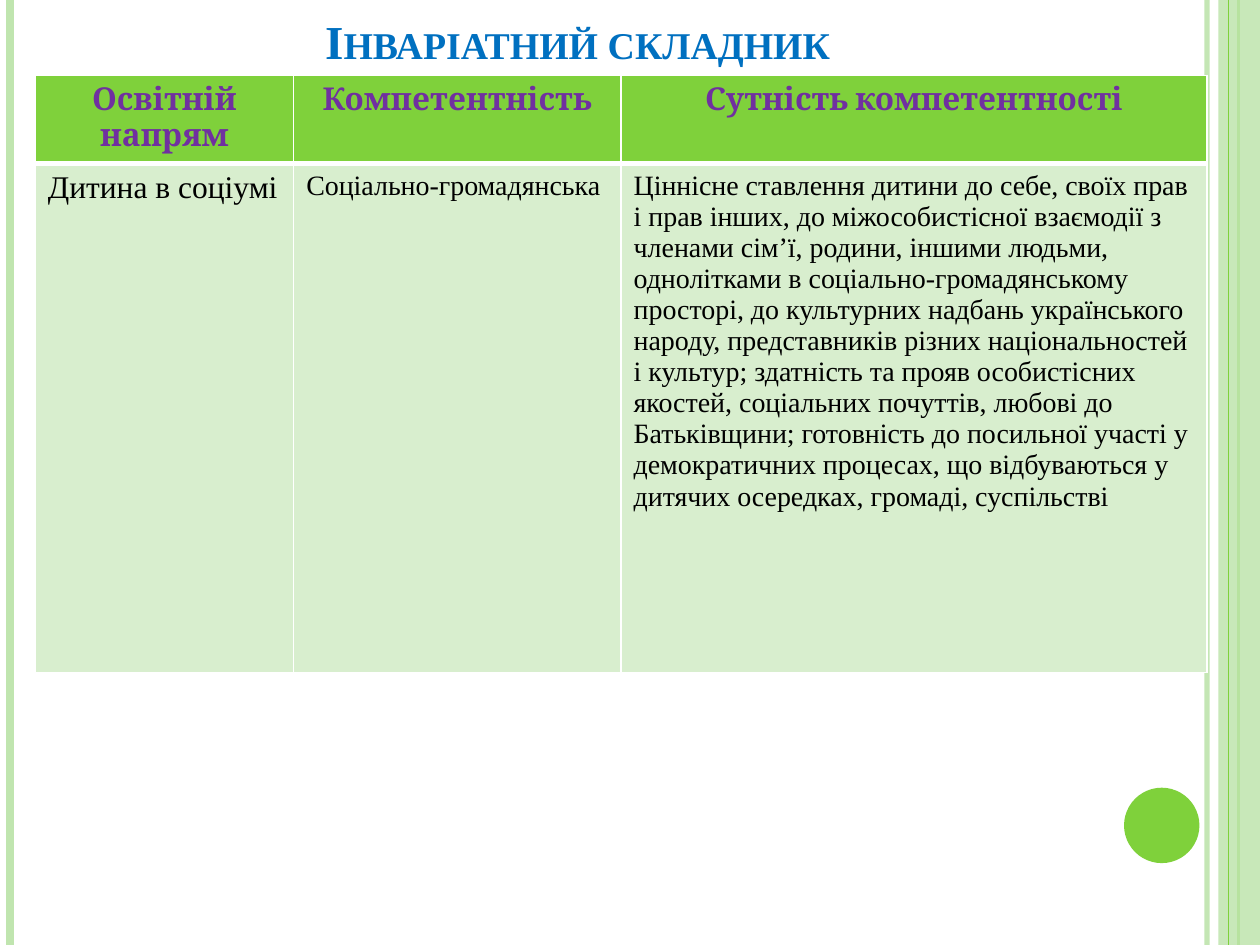
from dataclasses import dataclass
from typing import NamedTuple

from lxml import etree
from pptx import Presentation
from pptx.dml.color import RGBColor
from pptx.enum import shapes, text
from pptx.oxml.ns import qn
from pptx.util import Cm, Pt


@dataclass(frozen=True)
class Theme:
    white: str = "FFFFFF"
    black: str = "000000"
    green: str = "7FD13B"
    pale: str = "C0E5AF"
    mint: str = "D8EECE"
    blue: str = "0070C0"
    plum: str = "7030A0"
    serif: str = "Times New Roman"
    head: str = "Cambria"
    big: float = 27
    mid: float = 18
    small: float = 16


class Rule(NamedTuple):
    x: float
    width: float
    color: str
    alpha: int = 100


class Style(NamedTuple):
    font: str
    size: float
    color: str
    bold: bool = False
    align: text.PP_ALIGN = text.PP_ALIGN.LEFT


class Edges(NamedTuple):
    """Border widths in points, in the order the cell XML needs."""
    L: float
    R: float
    T: float
    B: float


T = Theme()
WIDTH, HEIGHT = 25.4, 19.05
MID = text.PP_ALIGN.CENTER
TITLE = Style(T.serif, T.big, T.blue, True, MID)
HEAD = Style(T.head, T.mid, T.plum, True, MID)
LEAD = Style(T.serif, T.mid, T.black)
BODY = Style(T.serif, T.small, T.black)

BACK = [Rule(24.33, 3, T.pale, 93), Rule(0.2, 4.5, T.pale), Rule(24.97, 1.5, T.green)]
FRONT = Rule(24.77, 0.75, T.green)

COLS = [5.21, 6.6, 11.81]
ROWS = [1.78, 10.26]
CELLS = [
    ["Освітній напрям", "Компетентність", "Сутність компетентності"],
    [
        "Дитина в соціумі",
        "Соціально-громадянська",
        "Ціннісне ставлення дитини до себе, своїх прав і прав інших, "
        "до міжособистісної взаємодії з членами сім’ї, родини, іншими людьми, "
        "однолітками в соціально-громадянському просторі, до культурних надбань "
        "українського народу, представників різних національностей і культур; "
        "здатність та прояв особистісних якостей, соціальних почуттів, любові до "
        "Батьківщини; готовність до посильної участі у демократичних процесах, "
        "що відбуваються у дитячих осередках, громаді, суспільстві",
    ],
]
STYLES = [[HEAD] * 3, [LEAD, BODY, BODY]]
FILLS = [T.green, T.mint]
EDGES = [Edges(1, 1, 1, 3), Edges(1, 1, 3, 1)]


def paint(fill, color: str, alpha: int = 100) -> None:
    fill.solid()
    fill.fore_color.rgb = RGBColor.from_string(color)
    if alpha < 100:
        tint = fill._xPr.find(qn("a:solidFill"))[0]
        etree.SubElement(tint, qn("a:alpha"), val=str(alpha * 1000))


def write(frame, words: str, style: Style) -> None:
    frame.text = words
    para = frame.paragraphs[0]
    para.alignment = style.align
    font = para.runs[0].font
    font.name, font.size, font.bold = style.font, Pt(style.size), style.bold
    font.color.rgb = RGBColor.from_string(style.color)


def draw_rule(slide, rule: Rule) -> None:
    x = Cm(rule.x)
    line = slide.shapes.add_connector(shapes.MSO_CONNECTOR.STRAIGHT, x, 0, x, Cm(HEIGHT))
    line.line.width = Pt(rule.width)
    paint(line.line.fill, rule.color, rule.alpha)
    etree.SubElement(line._element.spPr, qn("a:effectLst"))


def draw_shape(slide, kind, box: tuple, color: str, alpha: int = 100) -> None:
    shape = slide.shapes.add_shape(kind, *map(Cm, box))
    shape.shadow.inherit = False
    shape.line.fill.background()
    paint(shape.fill, color, alpha)


def draw_title(slide, words: str) -> None:
    title = slide.shapes.title
    title.left, title.top, title.width, title.height = map(Cm, (1.27, 0.33, 20.75, 1.19))
    frame = title.text_frame
    write(frame, words, TITLE)
    frame.auto_size = text.MSO_AUTO_SIZE.NONE
    frame.vertical_anchor = text.MSO_ANCHOR.BOTTOM
    frame.paragraphs[0].runs[0].font._element.set("cap", "small")


def edge_cell(cell, edges: Edges) -> None:
    props = cell._tc.get_or_add_tcPr()
    for side, width in edges._asdict().items():
        line = etree.SubElement(props, qn(f"a:ln{side}"), w=str(Pt(width)))
        fill = etree.SubElement(line, qn("a:solidFill"))
        etree.SubElement(fill, qn("a:srgbClr"), val=T.white)


def draw_table(slide) -> None:
    box = map(Cm, (0.71, 1.52, sum(COLS), sum(ROWS)))
    table = slide.shapes.add_table(len(ROWS), len(COLS), *box).table
    table.horz_banding = False
    for col, width in zip(table.columns, COLS):
        col.width = Cm(width)
    for r, (row, height) in enumerate(zip(table.rows, ROWS)):
        row.height = Cm(height)
        for cell, words, style in zip(row.cells, CELLS[r], STYLES[r]):
            write(cell.text_frame, words, style)
            edge_cell(cell, EDGES[r])
            paint(cell.fill, FILLS[r])


def main() -> None:
    deck = Presentation()
    deck.slide_width, deck.slide_height = Cm(WIDTH), Cm(HEIGHT)
    slide = deck.slides.add_slide(deck.slide_layouts[5])
    for rule in BACK:
        draw_rule(slide, rule)
    kind = shapes.MSO_SHAPE
    draw_shape(slide, kind.RECTANGLE, (24.56, 0, 0.84, HEIGHT), T.pale, 87)
    draw_rule(slide, FRONT)
    draw_shape(slide, kind.OVAL, (22.66, 15.88, 1.52, 1.52), T.green)
    draw_title(slide, "Інваріатний складник")
    draw_table(slide)
    deck.save("out.pptx")


if __name__ == "__main__":
    main()
